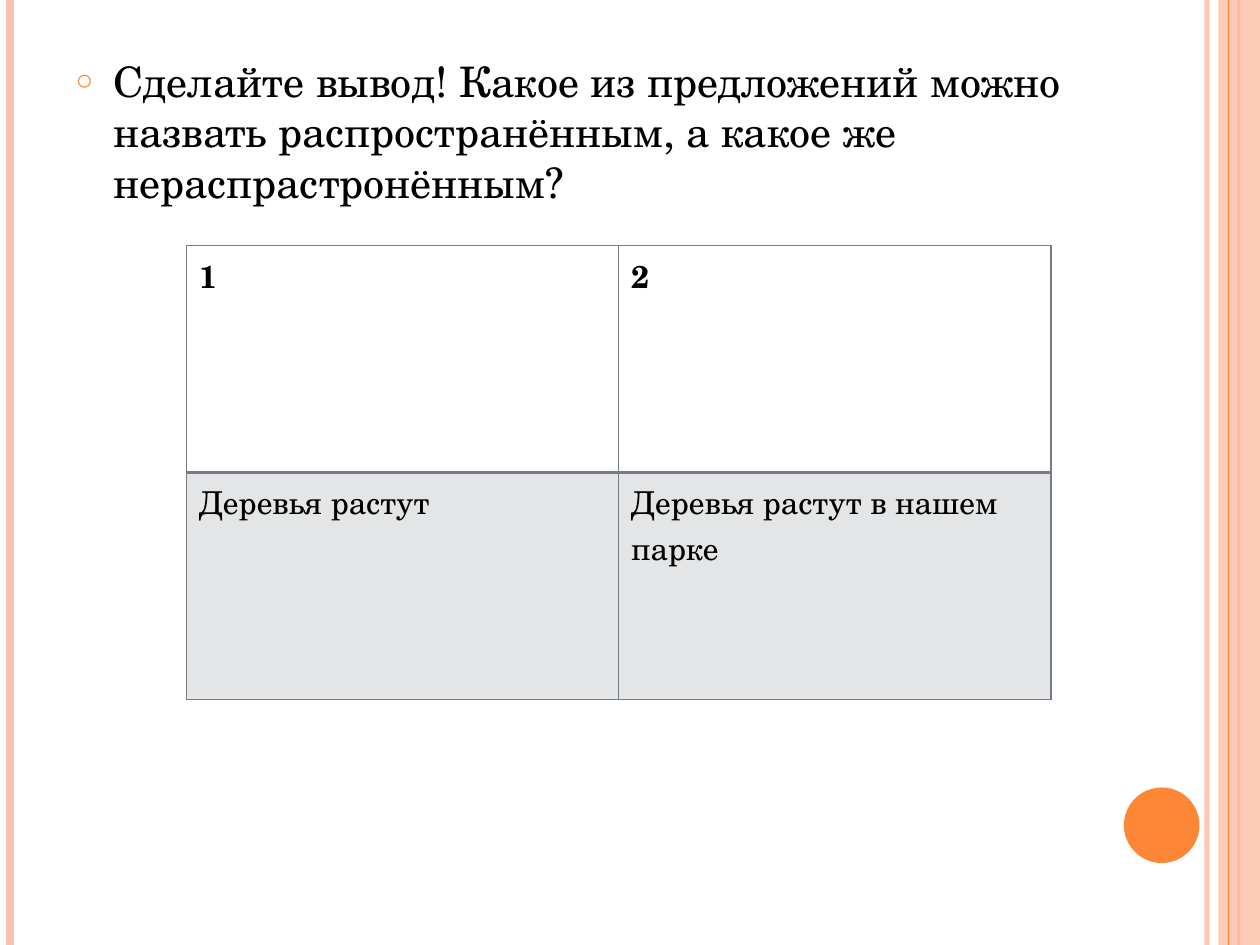
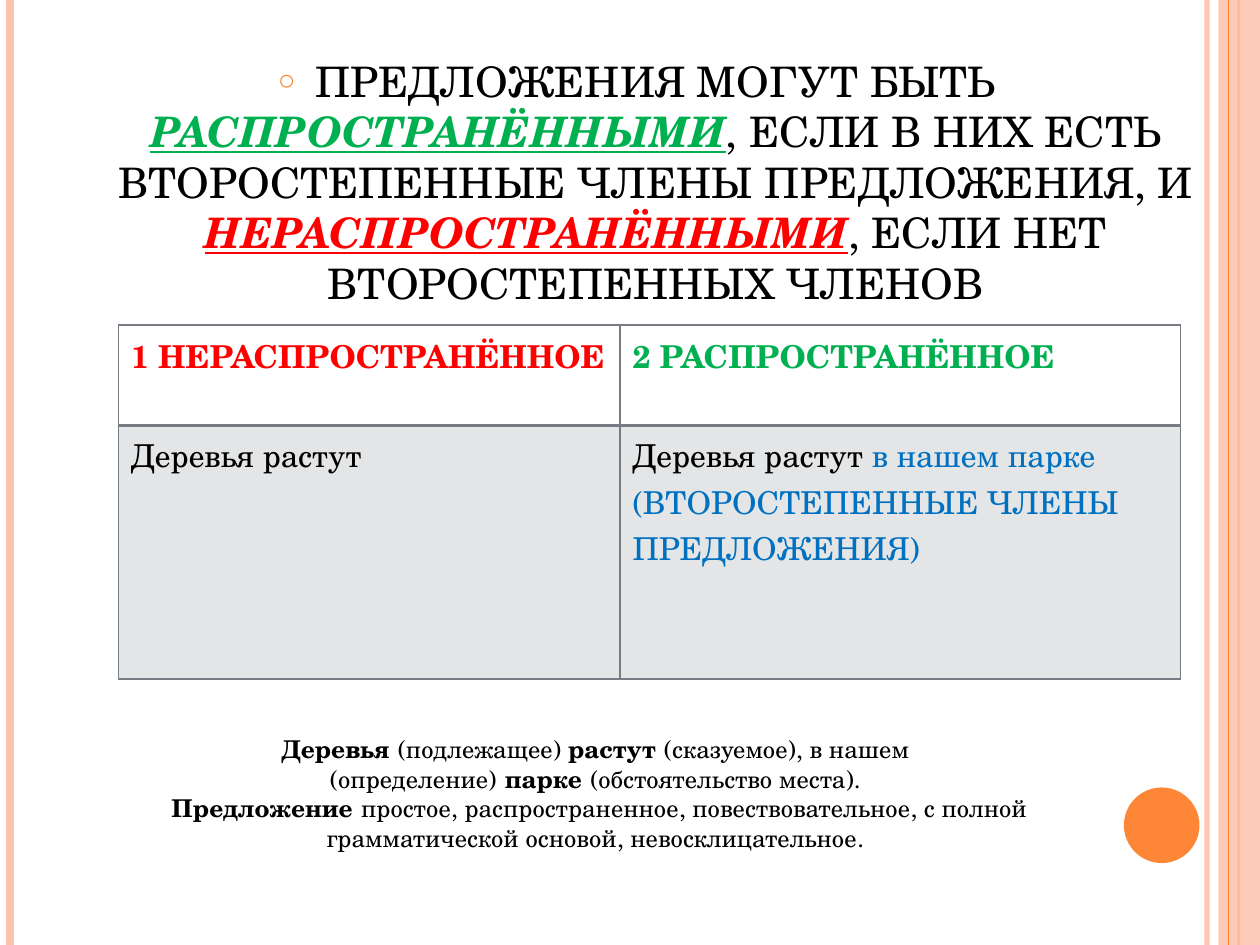
from lxml import etree
from pptx import Presentation
from pptx.dml.color import RGBColor
from pptx.enum import shapes, text
from pptx.oxml import ns
from pptx.util import Inches, Pt

FONT = "TeX Gyre Schola"
BLACK, GRAY, SHADE = "000000", "777C84", "E4E5E6"
ORANGE, PEACH = "FE8637", "FEC3AE"
GREEN, RED, BLUE = "00B050", "FF0000", "0070C0"
NBSP = chr(160)


def rgb(value):
    return RGBColor.from_string(value)


def add_xml(parent, tag, **attrs):
    return etree.SubElement(parent, ns.qn(tag), attrs)


def paint(fill, color, alpha=100):
    """Fill solid, with alpha in percent."""
    fill.solid()
    fill.fore_color.rgb = rgb(color)
    if alpha < 100:
        clr = fill._xPr.find(".//" + ns.qn("a:srgbClr"))
        add_xml(clr, "a:alpha", val=str(alpha * 1000))


def add_runs(p, runs, size):
    """Each run is (text, colour, style letters out of b, i, u)."""
    p.font.size, p.font.name = Pt(size), FONT
    for words, color, style in runs:
        r = p.add_run()
        r.text = words
        r.font.color.rgb = rgb(color)
        r.font.bold = "b" in style
        r.font.italic = "i" in style
        r.font.underline = "u" in style


def add_stripe(s, x, color, width, alpha=100):
    x = Inches(x)
    line = s.shapes.add_connector(shapes.MSO_CONNECTOR.STRAIGHT, x, 0, x, Inches(7.5))
    line.line.width = Pt(width)
    paint(line.line.fill, color, alpha)
    add_xml(line._element.spPr, "a:effectLst")


def add_block(s, kind, box, color, alpha=100):
    sp = s.shapes.add_shape(kind, *map(Inches, box))
    sp.shadow.inherit = False
    paint(sp.fill, color, alpha)
    sp.line.fill.background()


def add_frame(s):
    """Side stripes, right band and orange disc."""
    add_stripe(s, 9.58, PEACH, 3, 93)
    add_stripe(s, 0.08, PEACH, 4.5)
    add_stripe(s, 9.83, ORANGE, 1.5)
    add_block(s, shapes.MSO_SHAPE.RECTANGLE, (9.67, 0, 0.33, 7.5), PEACH, 87)
    add_stripe(s, 9.75, ORANGE, 0.75)
    add_block(s, shapes.MSO_SHAPE.OVAL, (8.92, 6.25, 0.6, 0.6), ORANGE)


def fill_body(body, box, runs, align):
    body.left, body.top, body.width, body.height = map(Inches, box)
    tf = body.text_frame
    tf.auto_size = text.MSO_AUTO_SIZE.NONE
    tf.vertical_anchor = text.MSO_ANCHOR.TOP
    p = tf.paragraphs[0]
    p.alignment = align
    p.space_before = Pt(0)
    pPr = p._p.get_or_add_pPr()
    pPr.set("marL", str(Inches(0.3)))
    pPr.set("indent", str(-Inches(0.3)))
    add_xml(add_xml(pPr, "a:buClr"), "a:srgbClr", val=ORANGE)
    add_xml(pPr, "a:buSzPct", val="70000")
    add_xml(pPr, "a:buChar", char="○")
    add_runs(p, runs, 24)


def set_borders(cell, **widths):
    tcPr = cell._tc.get_or_add_tcPr()
    for i, side in enumerate("LRTB"):
        ln = etree.Element(ns.qn(f"a:ln{side}"), w=str(Pt(widths.get(side, 1))))
        add_xml(add_xml(ln, "a:solidFill"), "a:srgbClr", val=GRAY)
        tcPr.insert(i, ln)


def add_sentence_table(s, left, top, widths, heights, rows):
    """Header row over a shaded row of sentences."""
    box = map(Inches, (left, top, sum(widths), sum(heights)))
    table = s.shapes.add_table(len(rows), len(widths), *box).table
    table.first_row = table.horz_banding = False
    for column, width in zip(table.columns, widths):
        column.width = Inches(width)
    for i, (height, row) in enumerate(zip(heights, rows)):
        table.rows[i].height = Inches(height)
        for j, runs in enumerate(row):
            cell = table.cell(i, j)
            if i == 0:
                cell.fill.background()
                set_borders(cell, B=2)
            else:
                paint(cell.fill, SHADE)
                set_borders(cell, T=2)
            add_runs(cell.text_frame.paragraphs[0], runs, 18)


def add_analysis(s, box, paragraphs):
    tf = s.shapes.add_textbox(*map(Inches, box)).text_frame
    tf.word_wrap = True
    for i, runs in enumerate(paragraphs):
        p = tf.add_paragraph() if i else tf.paragraphs[0]
        p.alignment = text.PP_ALIGN.CENTER
        add_runs(p, runs, 14)


def add_slide(prs, runs, align):
    s = prs.slides.add_slide(prs.slide_layouts[1])
    title = s.shapes.title._element
    title.getparent().remove(title)
    add_frame(s)
    fill_body(s.placeholders[1], (0.5, 0.39, 9.11, 6.69), runs, align)
    return s


def question_slide(prs):
    s = add_slide(prs, [(
        "Сделайте вывод! Какое из предложений можно назвать распространённым, "
        "а какое же нераспрастронённым?", BLACK, "")], text.PP_ALIGN.LEFT)
    add_sentence_table(s, 1.48, 1.95, (3.43, 3.43), (1.8, 1.8), [
        [[("1", BLACK, "b")], [("2", BLACK, "b")]],
        [[("Деревья растут", BLACK, "")],
         [("Деревья растут в нашем парке", BLACK, "")]],
    ])


def answer_slide(prs):
    s = add_slide(prs, [
        ("ПРЕДЛОЖЕНИЯ МОГУТ БЫТЬ ", BLACK, ""),
        ("РАСПРОСТРАНЁННЫМИ", GREEN, "biu"),
        (", ЕСЛИ В НИХ ЕСТЬ ВТОРОСТЕПЕННЫЕ ЧЛЕНЫ ПРЕДЛОЖЕНИЯ, И ", BLACK, ""),
        ("НЕРАСПРОСТРАНЁННЫМИ", RED, "biu"),
        (", ЕСЛИ НЕТ ВТОРОСТЕПЕННЫХ ЧЛЕНОВ", BLACK, ""),
    ], text.PP_ALIGN.CENTER)
    add_sentence_table(s, 0.94, 2.58, (3.98, 4.45), (0.8, 2.01), [
        [[("1 НЕРАСПРОСТРАНЁННОЕ", RED, "b")],
         [("2 РАСПРОСТРАНЁННОЕ", GREEN, "b")]],
        [[("Деревья растут", BLACK, "")],
         [("Деревья растут ", BLACK, ""),
          ("в нашем парке (ВТОРОСТЕПЕННЫЕ ЧЛЕНЫ ПРЕДЛОЖЕНИЯ)", BLUE, "")]],
    ])
    add_analysis(s, (1.17, 5.78, 7.11, 1.06), [
        [("Деревья", BLACK, "b"),
         (f"{NBSP}(подлежащее) ", BLACK, ""),
         ("растут", BLACK, "b"),
         (f"{NBSP}(сказуемое), в нашем (определение){NBSP}", BLACK, ""),
         ("парке", BLACK, "b"),
         (f"{NBSP}(обстоятельство места).", BLACK, "")],
        [(f"{NBSP}Предложение", BLACK, "b"),
         (f"{NBSP}простое, распространенное, повествовательное, с полной "
          "грамматической основой, невосклицательное.", BLACK, "")],
    ])


def main():
    prs = Presentation()
    prs.slide_width, prs.slide_height = Inches(10), Inches(7.5)
    question_slide(prs)
    answer_slide(prs)
    prs.save("out.pptx")


if __name__ == "__main__":
    main()
